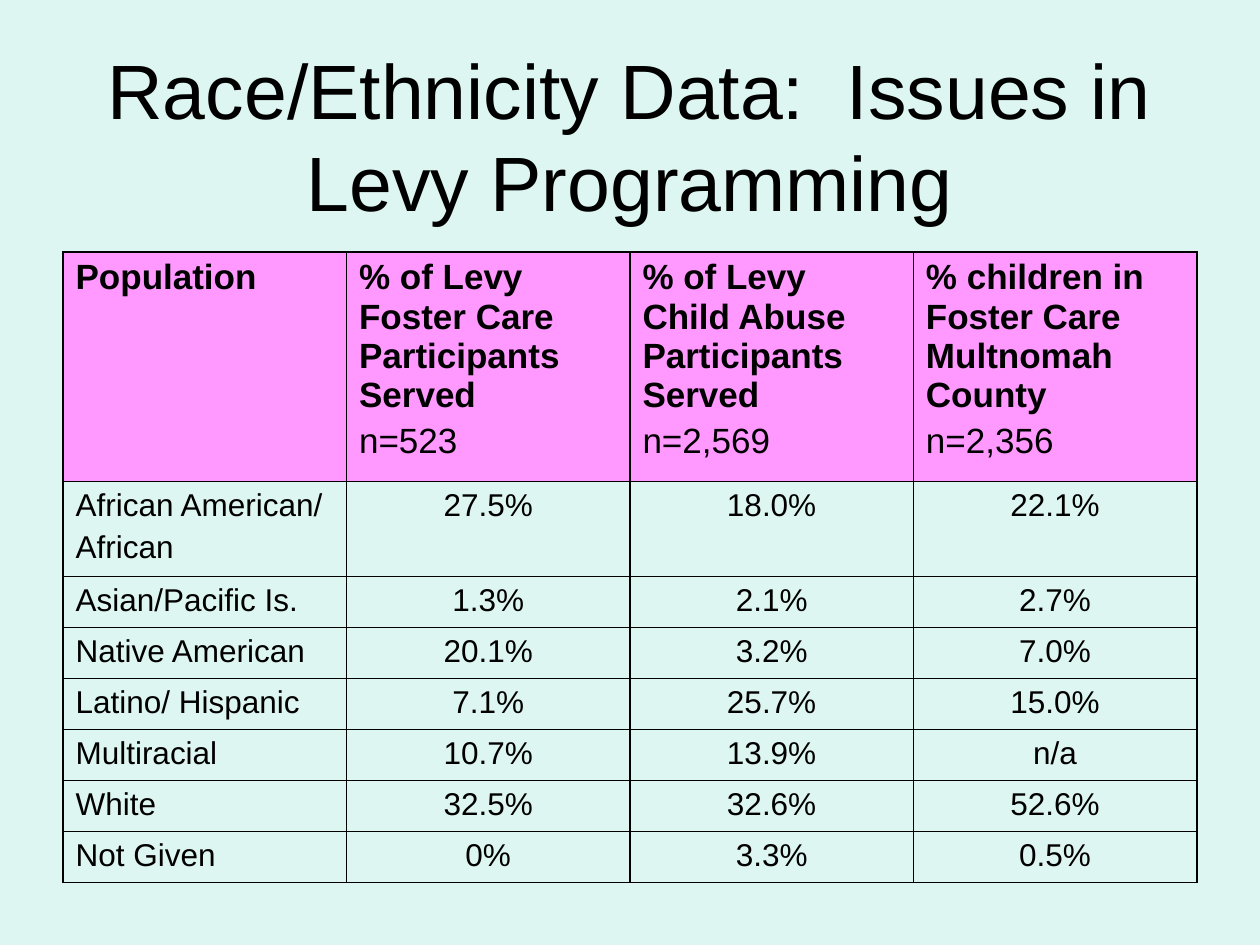
from lxml import etree
from pptx import Presentation
from pptx.dml.color import RGBColor
from pptx.enum.text import MSO_ANCHOR, PP_ALIGN
from pptx.oxml.ns import qn
from pptx.util import Pt

PX = 914400 // 126
FONT = "Arial"
LEFT, CENTER = PP_ALIGN.LEFT, PP_ALIGN.CENTER
MIDDLE = MSO_ANCHOR.MIDDLE
COLORS = {"background": "DEF6F1", "header": "FF99FF", "ink": "000000"}

TITLE = "Race/Ethnicity Data:  Issues in Levy Programming"
HEADER = [
    ["Population"],
    ["% of Levy Foster Care Participants Served", "n=523"],
    ["% of Levy Child Abuse Participants Served", "n=2,569"],
    ["% children in Foster Care Multnomah County", "n=2,356"],
]
POPULATIONS = [
    (["African American/", "African"], "27.5%", "18.0%", "22.1%"),
    (["Asian/Pacific Is."], "1.3%", "2.1%", "2.7%"),
    (["Native American"], "20.1%", "3.2%", "7.0%"),
    (["Latino/ Hispanic"], "7.1%", "25.7%", "15.0%"),
    (["Multiracial"], "10.7%", "13.9%", "n/a"),
    (["White"], "32.5%", "32.6%", "52.6%"),
    (["Not Given"], "0%", "3.3%", "0.5%"),
]
HEADER_HEIGHT, TALL_ROW, PLAIN_ROW, COLUMN_WIDTH = 215, 90, 51, 1134 / 4


def px(length):
    """Turn pixels into EMU."""
    return round(length * PX)


def rgb(name):
    """Look up a named colour."""
    return RGBColor.from_string(COLORS[name])


def write_lines(frame, lines, size, align=LEFT, bold_first=False):
    """Write one paragraph per line, spaced by a fifth of the text size."""
    frame.word_wrap = True
    for index, line in enumerate(lines):
        para = frame.add_paragraph() if index else frame.paragraphs[0]
        para.text = line
        para.alignment = align
        para.space_before = Pt(size / 5 if index else 0)
        para.font.name = FONT
        para.font.size = Pt(size)
        para.font.bold = bold_first and index == 0
        para.font.color.rgb = rgb("ink")


def add_borders(cell):
    """Draw a one-point line on each side of a cell."""
    properties = cell._tc.get_or_add_tcPr()
    for index, side in enumerate(("lnL", "lnR", "lnT", "lnB")):
        line = etree.Element(qn(f"a:{side}"), w=str(Pt(1)))
        fill = etree.SubElement(line, qn("a:solidFill"))
        etree.SubElement(fill, qn("a:srgbClr"), val=COLORS["ink"])
        properties.insert(index, line)


def fill_cell(cell, lines, size, fill, align=LEFT, bold_first=False):
    """Give a cell its text, fill and borders."""
    write_lines(cell.text_frame, lines, size, align, bold_first)
    cell.fill.solid()
    cell.fill.fore_color.rgb = rgb(fill)
    add_borders(cell)


def add_title(page):
    """Add the centred title."""
    box = page.shapes.add_textbox(px(63), px(38), px(1134), px(193))
    box.text_frame.vertical_anchor = MIDDLE
    write_lines(box.text_frame, [TITLE], 44, CENTER)


def add_population_table(page):
    """Add the table of shares by population."""
    heights = [HEADER_HEIGHT] + [
        TALL_ROW if len(names) > 1 else PLAIN_ROW for names, *_ in POPULATIONS
    ]
    table = page.shapes.add_table(
        len(heights), len(HEADER), px(63), px(252), px(1134), px(sum(heights))
    ).table
    for column in table.columns:
        column.width = px(COLUMN_WIDTH)
    for row, height in zip(table.rows, heights):
        row.height = px(height)
    for column, lines in enumerate(HEADER):
        fill_cell(table.cell(0, column), lines, 20, "header", bold_first=True)
    for row, (names, *shares) in enumerate(POPULATIONS, 1):
        fill_cell(table.cell(row, 0), names, 18, "background")
        for column, share in enumerate(shares, 1):
            fill_cell(table.cell(row, column), [share], 18, "background", CENTER)


def main():
    """Build and save the slide."""
    deck = Presentation()
    deck.slide_width, deck.slide_height = px(1260), px(945)
    page = deck.slides.add_slide(deck.slide_layouts[6])
    page.background.fill.solid()
    page.background.fill.fore_color.rgb = rgb("background")
    add_title(page)
    add_population_table(page)
    deck.save("out.pptx")


if __name__ == "__main__":
    main()
